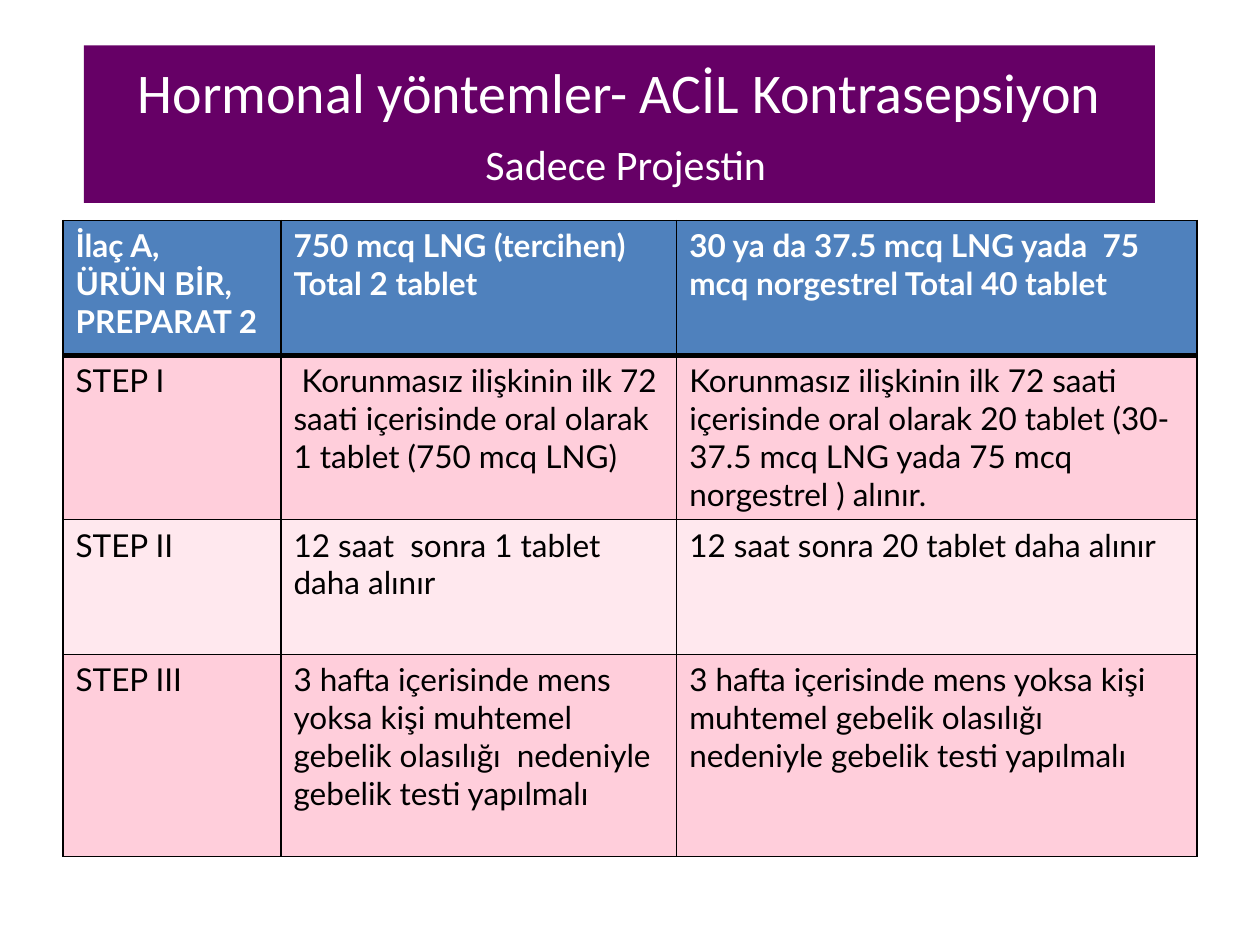
from lxml.etree import SubElement
from pptx import Presentation
from pptx.dml.color import RGBColor
from pptx.enum.shapes import MSO_SHAPE
from pptx.enum.text import MSO_ANCHOR, PP_ALIGN
from pptx.oxml.ns import qn
from pptx.util import Pt

COLORS = {
    "title": "660066",
    "header": "4F81BD",
    "band_dark": "FFCEDB",
    "band_light": "FFE8EE",
    "white": "FFFFFF",
    "black": "000000",
}

COLUMN_WIDTHS = [124.6, 226.1, 297.3]
ROW_HEIGHTS = [77, 94, 77, 115.5]
PREGNANCY_TEST = ("3 hafta içerisinde mens yoksa kişi muhtemel gebelik olasılığı  "
                  "nedeniyle gebelik testi yapılmalı")
ROWS = [
    ["İlaç A,\nÜRÜN BİR,\nPREPARAT 2",
     "750 mcq LNG (tercihen) Total 2 tablet",
     "30 ya da 37.5 mcq LNG yada  75 mcq norgestrel Total 40 tablet"],
    ["STEP I",
     " Korunmasız ilişkinin ilk 72 saati içerisinde oral olarak 1 tablet (750 mcq LNG)",
     "Korunmasız ilişkinin ilk 72 saati içerisinde oral olarak 20 tablet "
     "(30-37.5 mcq LNG yada 75 mcq norgestrel ) alınır."],
    ["STEP II",
     "12 saat  sonra 1 tablet daha alınır",
     "12 saat sonra 20 tablet daha alınır"],
    ["STEP III", PREGNANCY_TEST, PREGNANCY_TEST],
]


def color(name):
    return RGBColor.from_string(COLORS[name])


def add_text(paragraph, text, font="Lato", size=18, fill="black", bold=False):
    run = paragraph.add_run()
    run.text = text
    run.font.name = font
    run.font.size = Pt(size)
    run.font.bold = bold
    run.font.color.rgb = color(fill)


def add_title(slide):
    shape = slide.shapes.add_shape(MSO_SHAPE.RECTANGLE, Pt(48), Pt(26), Pt(612), Pt(90))
    shape.shadow.inherit = False
    shape.fill.solid()
    shape.fill.fore_color.rgb = color("title")
    shape.line.fill.background()
    frame = shape.text_frame
    frame.word_wrap = True
    frame.vertical_anchor = MSO_ANCHOR.MIDDLE
    paragraph = frame.paragraphs[0]
    paragraph.alignment = PP_ALIGN.CENTER
    style = {"font": "Calibri", "fill": "white"}
    add_text(paragraph, "Hormonal yöntemler- ACİL Kontrasepsiyon", size=32, **style)
    paragraph.add_line_break()
    add_text(paragraph, " ", size=32, **style)
    add_text(paragraph, "Sadece Projestin", size=24, **style)


def set_borders(cell, top, bottom):
    properties = cell._tc.get_or_add_tcPr()
    widths = {"a:lnL": 1, "a:lnR": 1, "a:lnT": top, "a:lnB": bottom}
    for tag, width in widths.items():
        line = SubElement(properties, qn(tag), w=str(Pt(width)))
        fill = SubElement(line, qn("a:solidFill"))
        SubElement(fill, qn("a:srgbClr"), val=COLORS["black"])


def fill_cell(cell, text, row):
    is_header = row == 0
    # Borders come before the fill in the cell properties
    set_borders(cell, top=3 if row == 1 else 1, bottom=3 if is_header else 1)
    cell.fill.solid()
    band = "band_dark" if row % 2 else "band_light"
    cell.fill.fore_color.rgb = color("header" if is_header else band)
    frame = cell.text_frame
    for index, line in enumerate(text.split("\n")):
        paragraph = frame.add_paragraph() if index else frame.paragraphs[0]
        add_text(paragraph, line, fill="white" if is_header else "black", bold=is_header)


def add_dose_table(slide):
    table = slide.shapes.add_table(
        len(ROWS), len(COLUMN_WIDTHS), Pt(36), Pt(126),
        Pt(sum(COLUMN_WIDTHS)), Pt(sum(ROW_HEIGHTS))).table
    for column, width in zip(table.columns, COLUMN_WIDTHS):
        column.width = Pt(width)
    for row, (texts, height) in enumerate(zip(ROWS, ROW_HEIGHTS)):
        table.rows[row].height = Pt(height)
        for column, text in enumerate(texts):
            fill_cell(table.cell(row, column), text, row)


def main():
    presentation = Presentation()
    presentation.slide_width, presentation.slide_height = Pt(720), Pt(540)
    slide = presentation.slides.add_slide(presentation.slide_layouts[6])

    # Dosing steps, then the title band
    add_dose_table(slide)
    add_title(slide)
    presentation.save("out.pptx")


if __name__ == "__main__":
    main()
